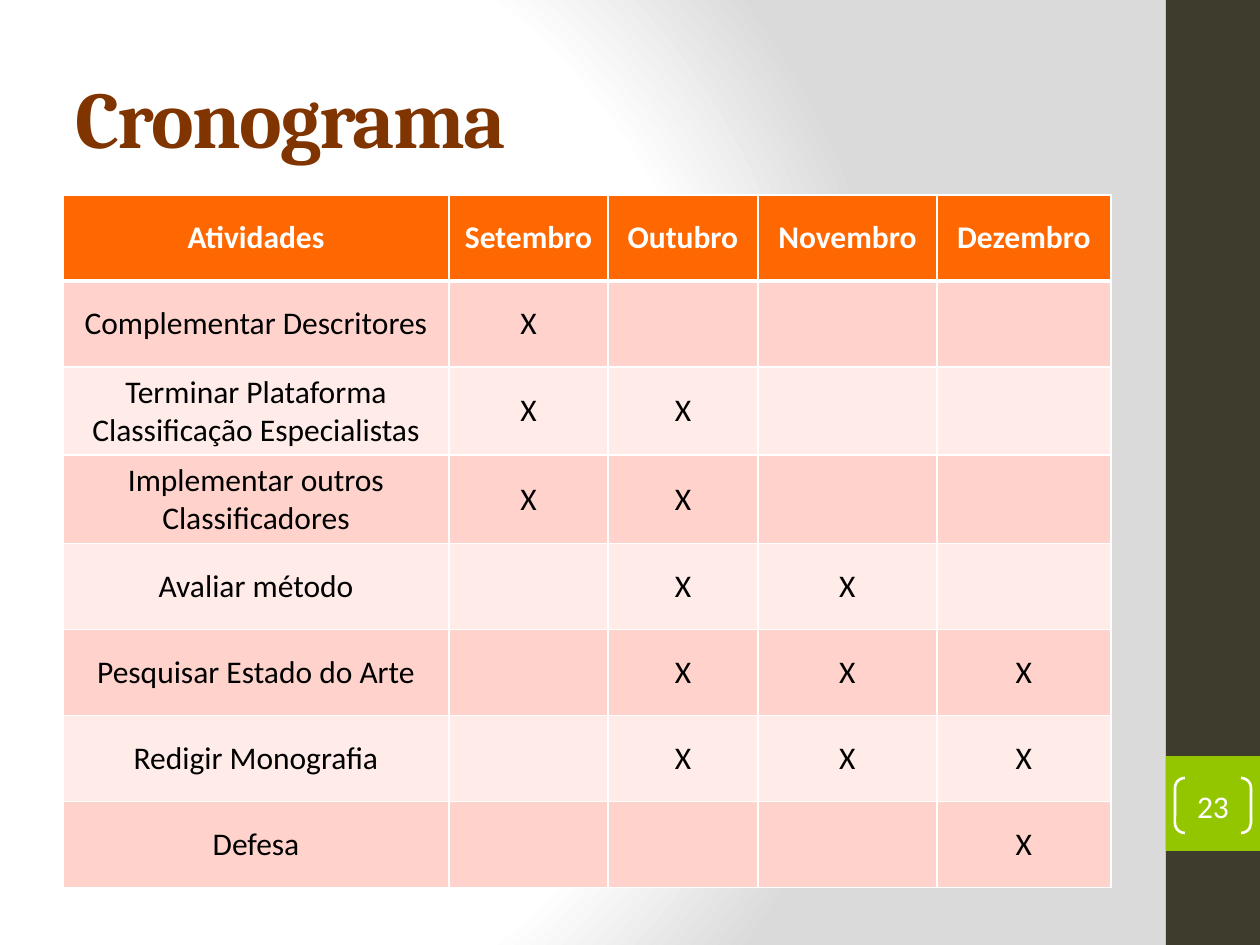
"""Build the "Cronograma" schedule slide."""
from lxml import etree
from pptx import Presentation
from pptx.dml.color import RGBColor
from pptx.enum.shapes import MSO_SHAPE
from pptx.enum.text import MSO_ANCHOR, PP_ALIGN
from pptx.oxml import parse_xml
from pptx.oxml.ns import nsdecls, qn
from pptx.util import Emu, Pt

RECTANGLE, BRACKETS = MSO_SHAPE.RECTANGLE, MSO_SHAPE.DOUBLE_BRACKET
MIDDLE = MSO_ANCHOR.MIDDLE
LEFT, CENTER = PP_ALIGN.LEFT, PP_ALIGN.CENTER
SCALE = 914400 / 126

THEME = {
    "white": "FFFFFF", "gray": "DADADA", "sidebar": "3E3D2D", "green": "94C600",
    "header": "FF6700", "bands": ("FFD3CC", "FFEBE7"),
    "title": {"name": "Cambria", "size": Pt(46), "bold": True, "color": "803400"},
    "head": {"name": "Calibri", "size": Pt(18), "bold": True, "color": "FFFFFF"},
    "body": {"name": "Calibri", "size": Pt(18), "bold": False, "color": "000000"},
    "number": {"name": "Calibri", "size": Pt(18), "bold": False, "color": "FFFFFF"},
}


def px(*lengths):
    """Turn pixel lengths into EMU."""
    return [Emu(round(length * SCALE)) for length in lengths]


def write(frame, text, style, align):
    """Put one formatted span into a text frame."""
    frame.word_wrap = True
    para = frame.paragraphs[0]
    para.alignment = align
    span = para.add_run()
    span.text = text
    for name, value in style.items():
        if name == "color":
            span.font.color.rgb = RGBColor.from_string(value)
        else:
            setattr(span.font, name, value)
    return span


deck = Presentation()
deck.slide_width, deck.slide_height = px(1260, 945)
page = deck.slides.add_slide(deck.slide_layouts[6])

stops = "".join(
    f'<a:gs pos="{place * 1000}"><a:srgbClr val="{THEME[color]}"/></a:gs>'
    for place, color in ((0, "white"), (75, "white"), (100, "gray"))
)
background = parse_xml(
    f'<p:bg {nsdecls("p", "a")}><p:bgPr><a:gradFill rotWithShape="1"><a:gsLst>{stops}</a:gsLst>'
    '<a:path path="circle"><a:fillToRect l="20000" t="50000" r="100000" b="50000"/></a:path>'
    "</a:gradFill><a:effectLst/></p:bgPr></p:bg>"
)
page.element.cSld.insert(0, background)

for top, height, color in ((0, 945, "sidebar"), (756, 95, "green")):
    bar = page.shapes.add_shape(RECTANGLE, *px(1166, top, 94, height))
    bar.shadow.inherit = False
    bar.fill.solid()
    bar.fill.fore_color.rgb = RGBColor.from_string(THEME[color])
    bar.line.fill.background()

title_box = page.shapes.add_textbox(*px(63, 38, 1050, 157))
title_box.text_frame.vertical_anchor = MIDDLE
title = write(title_box.text_frame, "Cronograma", THEME["title"], LEFT)
title.font._element.set("spc", "-100")

MONTHS = ["Setembro", "Outubro", "Novembro", "Dezembro"]
ACTIVITIES = [
    ("Complementar Descritores", "Setembro"),
    ("Terminar Plataforma Classificação Especialistas", "Setembro Outubro"),
    ("Implementar outros Classificadores", "Setembro Outubro"),
    ("Avaliar método", "Outubro Novembro"),
    ("Pesquisar Estado do Arte", "Outubro Novembro Dezembro"),
    ("Redigir Monografia", "Outubro Novembro Dezembro"),
    ("Defesa", "Dezembro"),
]
rows = [["Atividades", *MONTHS]]
for activity, active in ACTIVITIES:
    rows.append([activity, *("X" if month in active else "" for month in MONTHS)])

widths = px(386, 159, 150, 179, 174)
row_height = px(86)[0]
table = page.shapes.add_table(
    len(rows), len(widths), *px(63, 195), sum(widths), row_height * len(rows)
).table
for column, width in zip(table.columns, widths):
    column.width = width

for row_index, texts in enumerate(rows):
    table.rows[row_index].height = row_height
    is_head = row_index == 0
    fill = THEME["header"] if is_head else THEME["bands"][(row_index - 1) % 2]
    thick_side = {0: "lnB", 1: "lnT"}.get(row_index)
    for column_index, text in enumerate(texts):
        cell = table.cell(row_index, column_index)
        cell.vertical_anchor = MIDDLE
        properties = cell._tc.get_or_add_tcPr()
        for side in ("lnL", "lnR", "lnT", "lnB"):
            width = Pt(3 if side == thick_side else 1)
            border = etree.SubElement(properties, qn(f"a:{side}"), w=str(width))
            solid = etree.SubElement(border, qn("a:solidFill"))
            etree.SubElement(solid, qn("a:srgbClr"), val=THEME["white"])
        cell.fill.solid()
        cell.fill.fore_color.rgb = RGBColor.from_string(fill)
        if text:
            write(cell.text_frame, text, THEME["head" if is_head else "body"], CENTER)

number_box = page.shapes.add_shape(BRACKETS, *px(1175, 778, 76, 55))
number_box.shadow.inherit = False
number_box.adjustments[0] = 0.18
number_box.fill.background()
number_box.line.color.rgb = RGBColor.from_string(THEME["white"])
number_box.line.width = Pt(1.5)
number_frame = number_box.text_frame
for side in ("left", "top", "right", "bottom"):
    setattr(number_frame, f"margin_{side}", 0)
number_frame.vertical_anchor = MIDDLE
write(number_frame, "23", THEME["number"], CENTER)

deck.save("out.pptx")
